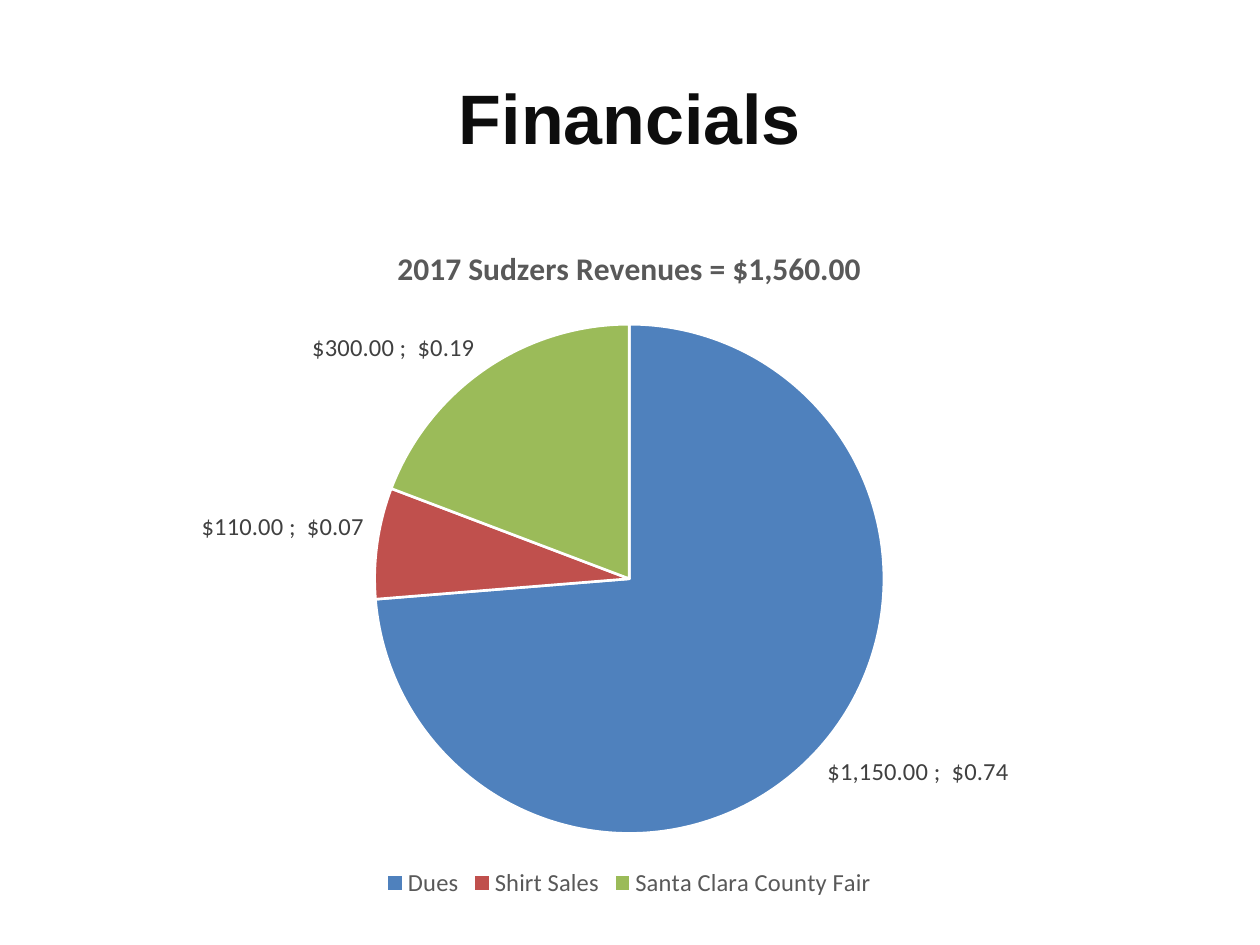
from pptx import Presentation
from pptx import util as u
from pptx.chart.data import CategoryChartData
from pptx.dml.color import RGBColor
from pptx.enum import chart as charts, text
from pptx.oxml import parse_xml
from pptx.oxml.ns import nsdecls

WIDTH, HEIGHT = u.Inches(10), u.Inches(7.5)
COLOURS = {
    "white": "FFFFFF",
    "title": "0D0D0D",
    "grey": "595959",
    "label": "404040",
    "Dues": "4F81BD",
    "Shirt Sales": "C0504D",
    "Santa Clara County Fair": "9BBB59",
}
REVENUES = {"Dues": 1150, "Shirt Sales": 110, "Santa Clara County Fair": 300}
ACCOUNTING = r'_("$"* #,##0.00_);_("$"* \(#,##0.00\);_("$"* "-"??_);_(@_)'


def box(left, top, width, height):
    """Turn shares of the slide's size into lengths."""
    return (int(WIDTH * left), int(HEIGHT * top),
            int(WIDTH * width), int(HEIGHT * height))


def colour(name):
    return RGBColor.from_string(COLOURS[name])


def set_font(font, size, colour_name, name="Calibri", bold=False):
    font.name, font.size, font.bold = name, u.Pt(size), bold
    font.color.rgb = colour(colour_name)


def write(frame, words, align=text.PP_ALIGN.CENTER, **font_format):
    paragraph = frame.paragraphs[0]
    paragraph.alignment = align
    run = paragraph.add_run()
    run.text = words
    set_font(run.font, **font_format)


def add_heading(slide, words):
    frame = slide.shapes.add_textbox(*box(0.05, 0.04, 0.9, 0.167)).text_frame
    frame.word_wrap = True
    frame.vertical_anchor = text.MSO_ANCHOR.MIDDLE
    write(frame, words, size=40, colour_name="title", name="Arial", bold=True)


def place_plot(chart, **shares):
    """Fix the inner plot area, given x, y, w and h as shares of the chart."""
    plot_area = chart.element.xpath("c:chart/c:plotArea")[0]
    for layout in plot_area.xpath("c:layout"):
        plot_area.remove(layout)
    lengths = "".join(f'<c:{key} val="{share}"/>' for key, share in shares.items())
    plot_area.insert(0, parse_xml(
        f'<c:layout {nsdecls("c")}><c:manualLayout><c:layoutTarget val="inner"/>'
        f'<c:xMode val="edge"/><c:yMode val="edge"/>{lengths}'
        '</c:manualLayout></c:layout>'))


def format_labels(labels):
    labels.show_value = labels.show_percentage = True
    labels.number_format, labels.number_format_is_linked = ACCOUNTING, False
    labels.position = charts.XL_LABEL_POSITION.OUTSIDE_END
    set_font(labels.font, 14, "label")
    show_bubble = labels._element.xpath("c:showBubbleSize")[0]
    show_bubble.addnext(parse_xml(f'<c:separator {nsdecls("c")}>; </c:separator>'))


def add_pie(slide, title, values):
    data = CategoryChartData(number_format=ACCOUNTING)
    data.categories = list(values)
    data.add_series("Series 1", list(values.values()))
    chart = slide.shapes.add_chart(
        charts.XL_CHART_TYPE.PIE, *box(0.087, 0.233, 0.825, 0.723), data).chart
    set_font(chart.font, 10, "grey")

    chart.has_title = True
    write(chart.chart_title.text_frame, title, size=18, colour_name="grey", bold=True)
    chart.chart_title.include_in_layout = False

    chart.has_legend = True
    chart.legend.position = charts.XL_LEGEND_POSITION.BOTTOM
    chart.legend.include_in_layout = False
    set_font(chart.legend.font, 14, "grey")

    plot = chart.plots[0]
    plot.vary_by_categories = True
    series = plot.series[0]
    for index, category in enumerate(values):
        point = series.points[index].format
        point.fill.solid()
        point.fill.fore_color.rgb = colour(category)
        point.line.color.rgb = colour("white")
        point.line.width = u.Pt(1.5)
    format_labels(series.data_labels)
    place_plot(chart, x=0.255, y=0.15, w=0.49, h=0.75)


def main():
    presentation = Presentation()
    presentation.slide_width, presentation.slide_height = WIDTH, HEIGHT
    slide = presentation.slides.add_slide(presentation.slide_layouts[6])
    add_heading(slide, "Financials")
    add_pie(slide, "2017 Sudzers Revenues = $1,560.00", REVENUES)
    presentation.save("out.pptx")


if __name__ == "__main__":
    main()
